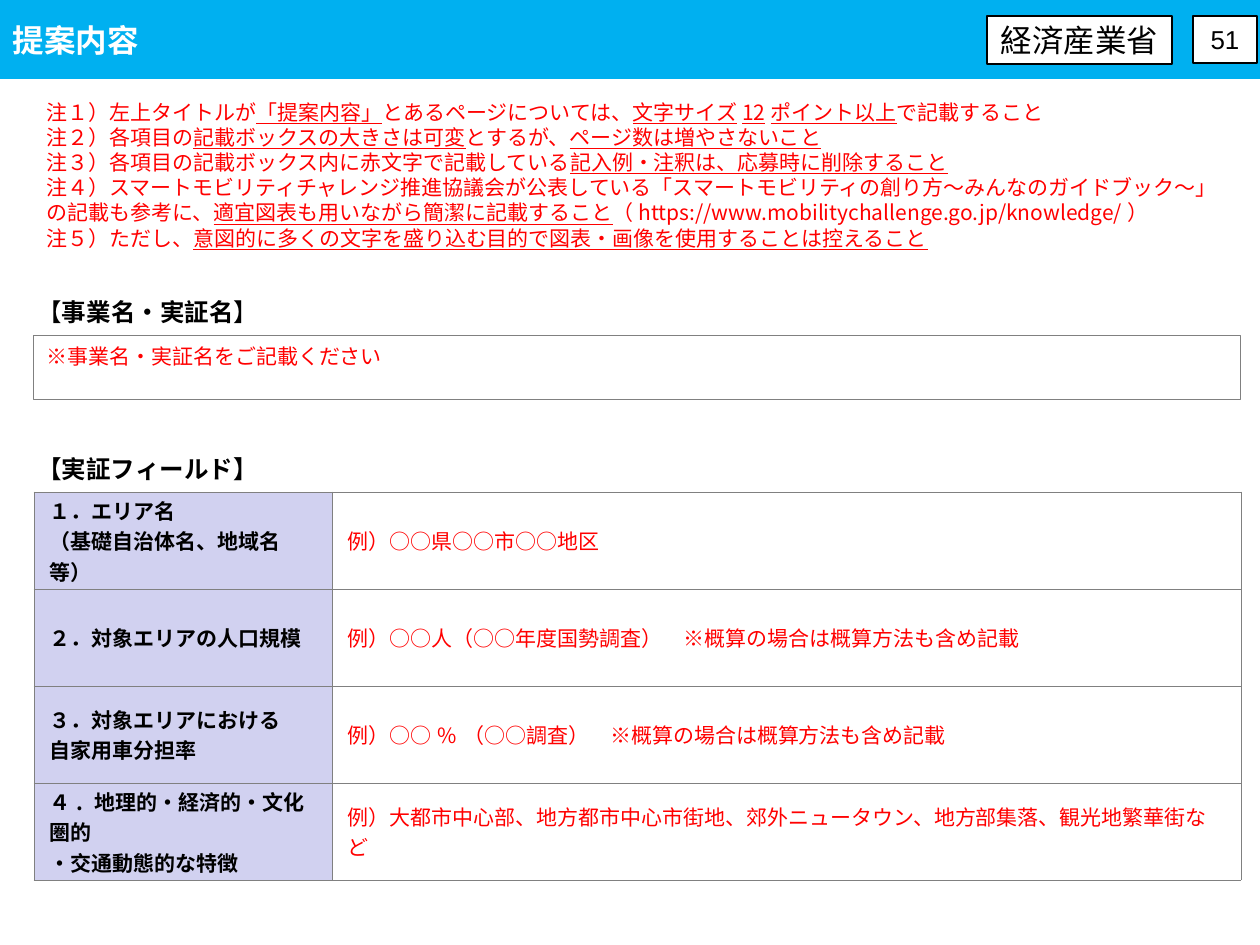
from dataclasses import dataclass

from lxml.etree import SubElement
from pptx import Presentation
from pptx.dml.color import RGBColor
from pptx.enum.shapes import MSO_SHAPE
from pptx.enum.text import MSO_ANCHOR, MSO_AUTO_SIZE, PP_ALIGN
from pptx.oxml.ns import qn
from pptx.util import Emu, Pt

PX_PER_INCH = 126
COLORS = {
    "band": "00B0F0", "white": "FFFFFF", "black": "000000",
    "red": "FF0000", "grid": "808080", "label": "D1D1F0",
}
NOTO, ARIAL = "Noto Sans CJK JP", "Arial"


@dataclass(frozen=True)
class Box:
    x: int
    y: int
    w: int
    h: int

    def emu(self) -> tuple[Emu, ...]:
        return tuple(px(n) for n in (self.x, self.y, self.w, self.h))


@dataclass(frozen=True)
class Style:
    size: float
    font: str = NOTO
    color: str = "black"
    bold: bool = False


@dataclass(frozen=True)
class Badge:
    text: str
    box: Box
    size: float
    line: float


@dataclass(frozen=True)
class Row:
    label: list[str]
    example: str


LABEL = Style(12, bold=True)
EXAMPLE = Style(12, color="red")
HEADING = Style(14, ARIAL)
BOLD_HEADING = Style(14, ARIAL, bold=True)

BADGES = [
    Badge("経済産業省", Box(987, 16, 185, 48), 18, 1),
    Badge("51", Box(1193, 16, 64, 47), 14.8, 0.75),
]
# In each note the odd pieces are underlined.
NOTES = [
    ["注１）左上タイトルが", "「提案内容」", "とあるページについては、",
     "文字サイズ12ポイント以上", "で記載すること"],
    ["注２）各項目の", "記載ボックスの大きさは可変", "とするが、", "ページ数は増やさないこと"],
    ["注３）各項目の記載ボックス内に赤文字で記載している", "記入例・注釈は、応募時に削除すること"],
    ["注４）スマートモビリティチャレンジ推進協議会が公表している"
     "「スマートモビリティの創り方～みんなのガイドブック～」の記載も参考に、",
     "適宜図表も用いながら簡潔に記載すること",
     "（https://www.mobilitychallenge.go.jp/knowledge/）"],
    ["注５）ただし、", "意図的に多くの文字を盛り込む目的で図表・画像を使用することは控えること"],
]
# Each label entry is a paragraph; a newline is a line break.
ROWS = [
    Row(["１．エリア名\n（基礎自治体名、地域名等）"], "例）○○県○○市○○地区"),
    Row(["２．対象エリアの人口規模"], "例）○○人（○○年度国勢調査）　※概算の場合は概算方法も含め記載"),
    Row(["３．対象エリアにおける\n自家用車分担率"], "例）○○%（○○調査）　※概算の場合は概算方法も含め記載"),
    Row(["４. 地理的・経済的・文化圏的", "・交通動態的な特徴"],
        "例）大都市中心部、地方都市中心市街地、郊外ニュータウン、地方部集落、観光地繁華街など"),
]


def px(n: int) -> Emu:
    return Emu(round(n * 914400 / PX_PER_INCH))


def rgb(name: str) -> RGBColor:
    return RGBColor.from_string(COLORS[name])


def paint(fill, color: str) -> None:
    fill.solid()
    fill.fore_color.rgb = rgb(color)


def add_run(p, text: str, style: Style, underline: bool = False) -> None:
    r = p.add_run()
    r.text = text
    f = r.font
    f.size, f.name, f.bold, f.underline = Pt(style.size), style.font, style.bold, underline
    f.color.rgb = rgb(style.color)
    SubElement(r._r.get_or_add_rPr(), qn("a:ea"), typeface=style.font)


def add_paragraphs(tf, texts: list[str], style: Style) -> None:
    for i, text in enumerate(texts):
        p = tf.add_paragraph() if i else tf.paragraphs[0]
        for j, line in enumerate(text.split("\n")):
            if j:
                p.add_line_break()
            add_run(p, line, style)


def add_frame(slide, box: Box, line: str, width: float):
    sp = slide.shapes.add_shape(MSO_SHAPE.RECTANGLE, *box.emu())
    sp.shadow.inherit = False
    sp.line.color.rgb = rgb(line)
    sp.line.width = Pt(width)
    sp.text_frame.word_wrap = True
    return sp


def add_badge(slide, badge: Badge) -> None:
    sp = add_frame(slide, badge.box, "black", badge.line)
    paint(sp.fill, "white")
    tf = sp.text_frame
    tf.word_wrap = False
    tf.vertical_anchor = MSO_ANCHOR.MIDDLE
    tf.paragraphs[0].alignment = PP_ALIGN.CENTER
    add_run(tf.paragraphs[0], badge.text, Style(badge.size, ARIAL))


def add_text(slide, box: Box):
    tf = slide.shapes.add_textbox(*box.emu()).text_frame
    tf.word_wrap = True
    return tf


def add_heading(slide, y: int, pieces: list[tuple[str, Style]]) -> None:
    tf = add_text(slide, Box(25, y, 840, 43))
    tf.auto_size = MSO_AUTO_SIZE.SHAPE_TO_FIT_TEXT
    for text, style in pieces:
        add_run(tf.paragraphs[0], text, style)


def add_notes(slide, box: Box) -> None:
    tf = add_text(slide, box)
    for i, pieces in enumerate(NOTES):
        p = tf.add_paragraph() if i else tf.paragraphs[0]
        p.line_spacing = Pt(14.4)
        for j, text in enumerate(pieces):
            add_run(p, text, EXAMPLE, underline=j % 2 == 1)


def format_cell(cell, fill: str) -> None:
    cell.vertical_anchor = MSO_ANCHOR.MIDDLE
    cell.margin_left = cell.margin_right = px(16)
    cell.margin_top = cell.margin_bottom = px(3)
    tc_pr = cell._tc.get_or_add_tcPr()
    for side in ("lnL", "lnR", "lnT", "lnB"):
        ln = SubElement(tc_pr, qn(f"a:{side}"), w=str(Pt(0.5)))
        SubElement(SubElement(ln, qn("a:solidFill")), qn("a:srgbClr"), val=COLORS["grid"])
    paint(cell.fill, fill)


def add_field_table(slide, box: Box, widths: tuple[int, int]) -> None:
    table = slide.shapes.add_table(len(ROWS), 2, *box.emu()).table
    table.first_row = table.horz_banding = False
    for column, width in zip(table.columns, widths):
        column.width = px(width)
    for i, row in enumerate(ROWS):
        table.rows[i].height = px(box.h // len(ROWS))
        columns = ((row.label, LABEL, "label"), ([row.example], EXAMPLE, "white"))
        for j, (texts, style, fill) in enumerate(columns):
            cell = table.cell(i, j)
            format_cell(cell, fill)
            add_paragraphs(cell.text_frame, texts, style)


def add_title(slide) -> None:
    sp = slide.shapes.title
    sp.left, sp.top, sp.width, sp.height = Box(0, 0, 1260, 79).emu()
    paint(sp.fill, "band")
    tf = sp.text_frame
    tf.auto_size = MSO_AUTO_SIZE.NONE
    tf.vertical_anchor = MSO_ANCHOR.MIDDLE
    tf.paragraphs[0].alignment = PP_ALIGN.LEFT
    add_run(tf.paragraphs[0], "提案内容", Style(18, color="white", bold=True))


def main() -> None:
    prs = Presentation()
    prs.slide_width, prs.slide_height = px(1260), px(945)
    slide = prs.slides.add_slide(prs.slide_layouts[5])
    add_title(slide)
    for badge in BADGES:
        add_badge(slide, badge)
    add_notes(slide, Box(34, 93, 1207, 176))

    add_heading(slide, 291, [("【", HEADING), ("事業名・実証名", BOLD_HEADING), ("】", HEADING)])
    sp = add_frame(slide, Box(34, 336, 1207, 64), "grid", 0.5)
    sp.fill.background()
    sp.text_frame.vertical_anchor = MSO_ANCHOR.TOP
    p = sp.text_frame.paragraphs[0]
    p.alignment = PP_ALIGN.LEFT
    p.line_spacing = Pt(15)
    add_run(p, "※事業名・実証名をご記載ください", Style(12, ARIAL, "red"))

    add_heading(slide, 448, [("【実証フィールド】", BOLD_HEADING)])
    add_field_table(slide, Box(34, 492, 1207, 388), (298, 909))
    prs.save("out.pptx")


if __name__ == "__main__":
    main()
